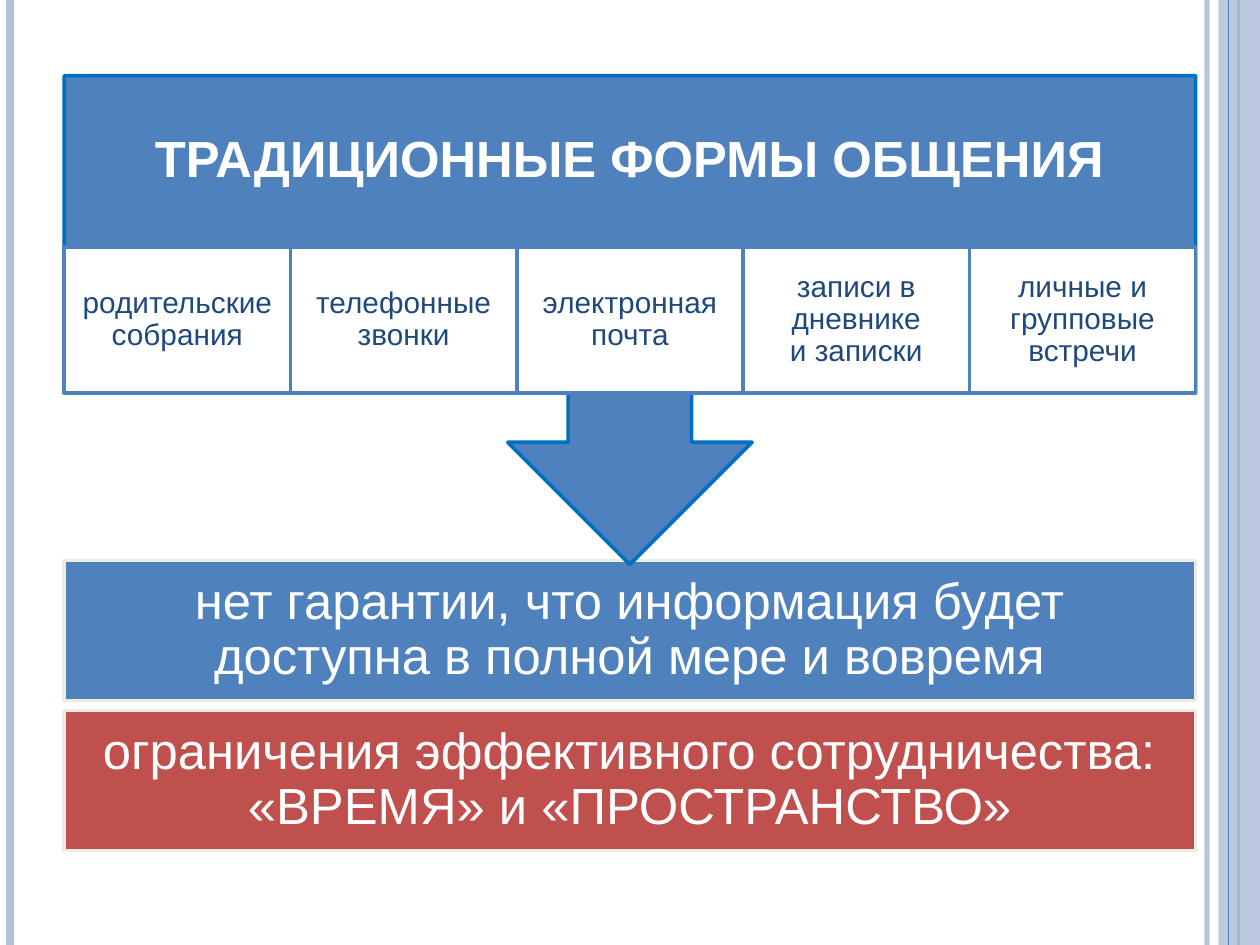
from dataclasses import dataclass

from lxml import etree
from pptx import Presentation
from pptx import util as u
from pptx.dml.color import RGBColor
from pptx.enum import shapes, text
from pptx.oxml.ns import qn

COLORS = {
    "blue": "4F81BD",
    "edge": "0070C0",
    "navy": "1F497D",
    "red": "C0504D",
    "cream": "EEECE1",
    "pale": "B3C1DB",
    "white": "FFFFFF",
}
LEFT, WIDTH = 0.51, 8.98
RIGHT, CENTER = LEFT + WIDTH, LEFT + WIDTH / 2
HEADER_TOP, CELL_TOP, CELL_HEIGHT = 0.6, 1.96, 1.16
CELL_BOTTOM = CELL_TOP + CELL_HEIGHT


@dataclass
class Stripe:
    x: float
    color: str
    width: float
    opacity: int = 100


@dataclass
class Box:
    label: str
    left: float
    top: float
    width: float
    height: float
    fill: str
    line: str
    size: int
    color: str
    inset_x: float
    inset_y: float


STRIPES_BEHIND = [
    Stripe(9.58, "pale", 3, 93),
    Stripe(0.08, "pale", 4.5),
    Stripe(9.83, "blue", 1.5),
]
STRIPE_FRONT = Stripe(9.75, "blue", 0.75)

FORMS = [
    "родительские собрания",
    "телефонные звонки",
    "электронная почта",
    "записи в дневнике\nи записки",
    "личные и групповые встречи",
]
CELL_WIDTH = WIDTH / len(FORMS)
CELLS = [
    Box(label, LEFT + i * CELL_WIDTH, CELL_TOP, CELL_WIDTH, CELL_HEIGHT,
        "white", "blue", 17, "navy", 0.11, 0.02)
    for i, label in enumerate(FORMS)
]
CONCLUSIONS = [
    Box(label, LEFT, top, WIDTH, 1.11, fill, "cream", 29, "white", 0.23, 0.23)
    for label, top, fill in [
        ("нет гарантии, что информация будет доступна в полной мере и вовремя", 4.45, "blue"),
        ("ограничения эффективного сотрудничества:\n«ВРЕМЯ» и «ПРОСТРАНСТВО»", 5.64, "red"),
    ]
]


def rgb(name: str) -> RGBColor:
    return RGBColor.from_string(COLORS[name])


def set_opacity(element, percent: int) -> None:
    color = next(element.iter(qn("a:srgbClr")))
    etree.SubElement(color, qn("a:alpha")).set("val", str(percent * 1000))


def style_shape(shape, fill: str, line: str | None = None) -> None:
    shape.shadow.inherit = False
    shape.fill.solid()
    shape.fill.fore_color.rgb = rgb(fill)
    if line:
        shape.line.color.rgb = rgb(line)
        shape.line.width = u.Pt(2)
    else:
        shape.line.fill.background()


def write_text(shape, content: str, *, size: int, color: str, bold: bool = False,
               inset_x: float = 0.23, inset_y: float = 0.23) -> None:
    frame = shape.text_frame
    frame.word_wrap = True
    frame.auto_size = text.MSO_AUTO_SIZE.NONE
    frame.vertical_anchor = text.MSO_ANCHOR.MIDDLE
    frame.margin_left = frame.margin_right = u.Inches(inset_x)
    frame.margin_top = frame.margin_bottom = u.Inches(inset_y)
    paragraph = frame.paragraphs[0]
    paragraph.text = content
    paragraph.alignment = text.PP_ALIGN.CENTER
    paragraph.line_spacing = 0.9
    paragraph.space_before = u.Pt(0)
    for run in paragraph.runs:
        run.font.name = "Arial"
        run.font.size = u.Pt(size)
        run.font.bold = bold
        run.font.color.rgb = rgb(color)


def draw_stripe(slide, stripe: Stripe) -> None:
    x = u.Inches(stripe.x)
    connector = slide.shapes.add_connector(
        shapes.MSO_CONNECTOR.STRAIGHT, x, 0, x, u.Inches(7.5))
    connector.line.color.rgb = rgb(stripe.color)
    connector.line.width = u.Pt(stripe.width)
    properties = connector.element.spPr
    if stripe.opacity < 100:
        set_opacity(properties, stripe.opacity)
    etree.SubElement(properties, qn("a:effectLst"))


def draw_frame(slide) -> None:
    for stripe in STRIPES_BEHIND:
        draw_stripe(slide, stripe)
    band = slide.shapes.add_shape(
        shapes.MSO_SHAPE.RECTANGLE, u.Inches(9.67), 0, u.Inches(0.33), u.Inches(7.5))
    style_shape(band, "pale")
    set_opacity(band.element.spPr, 87)
    draw_stripe(slide, STRIPE_FRONT)


def draw_box(slide, box: Box) -> None:
    shape = slide.shapes.add_shape(
        shapes.MSO_SHAPE.RECTANGLE, u.Inches(box.left), u.Inches(box.top),
        u.Inches(box.width), u.Inches(box.height))
    style_shape(shape, box.fill, box.line)
    write_text(shape, box.label, size=box.size, color=box.color,
               inset_x=box.inset_x, inset_y=box.inset_y)


def draw_arrow_panel(slide) -> None:
    stem, head, shoulder, tip = 0.49, 0.97, 3.51, 4.48
    right_half = [(RIGHT, HEADER_TOP), (RIGHT, CELL_BOTTOM), (CENTER + stem, CELL_BOTTOM),
                  (CENTER + stem, shoulder), (CENTER + head, shoulder)]
    left_half = [(2 * CENTER - x, y) for x, y in reversed(right_half)]
    points = [(u.Inches(x), u.Inches(y)) for x, y in right_half + [(CENTER, tip)] + left_half]
    builder = slide.shapes.build_freeform(*points[0])
    builder.add_line_segments(points[1:], close=True)
    style_shape(builder.convert_to_shape(), "blue", "edge")


def place_title(slide) -> None:
    title = slide.shapes.title
    title.left, title.top = u.Inches(LEFT), u.Inches(HEADER_TOP)
    title.width, title.height = u.Inches(WIDTH), u.Inches(CELL_TOP - HEADER_TOP)
    write_text(title, "ТРАДИЦИОННЫЕ ФОРМЫ ОБЩЕНИЯ", size=29, color="white", bold=True)
    title.element.getparent().append(title.element)


def main() -> None:
    presentation = Presentation()
    presentation.slide_width, presentation.slide_height = u.Inches(10), u.Inches(7.5)
    slide = presentation.slides.add_slide(presentation.slide_layouts[5])
    guarantee, limits = CONCLUSIONS
    draw_frame(slide)
    draw_box(slide, guarantee)
    draw_arrow_panel(slide)
    place_title(slide)
    for cell in CELLS:
        draw_box(slide, cell)
    draw_box(slide, limits)
    presentation.save("out.pptx")


if __name__ == "__main__":
    main()
